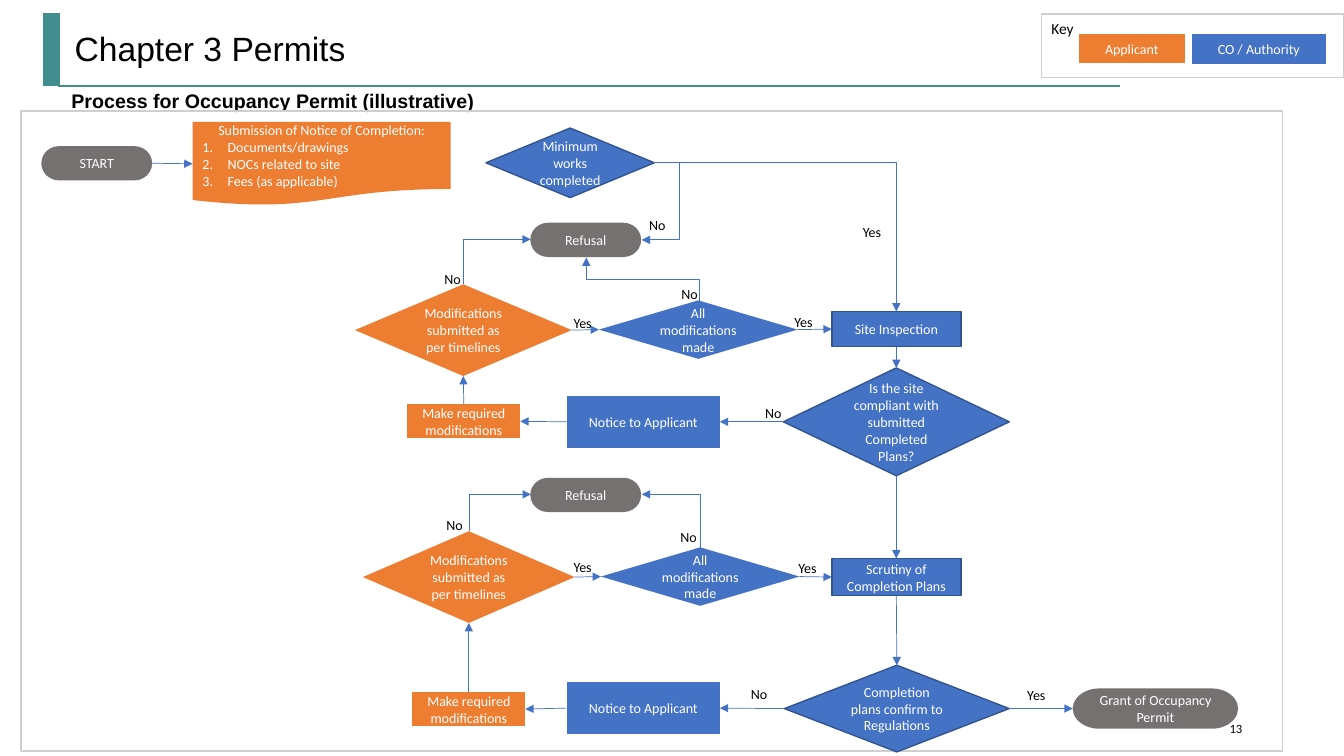
from dataclasses import dataclass
from typing import NamedTuple, Optional

from lxml.etree import SubElement
from pptx import Presentation
from pptx.dml.color import RGBColor
from pptx.enum.shapes import MSO_CONNECTOR, MSO_SHAPE
from pptx.enum.text import MSO_ANCHOR, PP_ALIGN
from pptx.oxml.ns import qn
from pptx.shapes.autoshape import Shape
from pptx.shapes.connector import Connector
from pptx.slide import Slide
from pptx.text.text import TextFrame
from pptx.util import Inches, Pt

TEAL = RGBColor(0x42, 0x8D, 0x8E)
BLUE = RGBColor(0x44, 0x72, 0xC4)
NAVY = RGBColor(0x32, 0x54, 0x91)
ORANGE = RGBColor(0xED, 0x7D, 0x31)
GREY = RGBColor(0x76, 0x71, 0x71)
SILVER = RGBColor(0xD0, 0xCE, 0xCE)
WHITE = RGBColor(0xFF, 0xFF, 0xFF)
BLACK = RGBColor(0, 0, 0)

COLS, ROWS = 133.3, 75
CELL = Inches(0.1)
TOP, LEFT, BOTTOM, RIGHT = range(4)


class Box(NamedTuple):
    x: float
    y: float
    w: float
    h: float


class Style(NamedTuple):
    geometry: MSO_SHAPE
    fill: Optional[RGBColor] = None
    line: Optional[RGBColor] = None


@dataclass
class Node:
    name: str
    text: str
    style: Style
    box: Box


@dataclass
class Arrow:
    start: str
    start_side: int
    end: str
    end_side: int


@dataclass
class Elbow:
    preset: str
    box: Box
    turn: int = 0
    flips: str = ""
    adjust: Optional[int] = None


END = Style(MSO_SHAPE.FLOWCHART_TERMINATOR, GREY)
FORM = Style(MSO_SHAPE.FLOWCHART_DOCUMENT, ORANGE)
CHECK = Style(MSO_SHAPE.FLOWCHART_DECISION, BLUE, NAVY)
REVIEW = Style(MSO_SHAPE.FLOWCHART_DECISION, BLUE)
REPLY = Style(MSO_SHAPE.FLOWCHART_DECISION, ORANGE)
STEP = Style(MSO_SHAPE.FLOWCHART_PROCESS, BLUE, NAVY)
NOTICE = Style(MSO_SHAPE.FLOWCHART_PROCESS, BLUE)
TASK = Style(MSO_SHAPE.FLOWCHART_PROCESS, ORANGE)
FRAME = Style(MSO_SHAPE.RECTANGLE, None, SILVER)

NODES = [
    Node("frame", "", FRAME, Box(2.1, 11, 125.1, 63.5)),
    Node("start", "START", END, Box(4.1, 14.5, 11, 3.4)),
    Node("form", "Submission of Notice of Completion:\nDocuments/drawings\n"
         "NOCs related to site\nFees (as applicable)", FORM, Box(19.1, 12.1, 25.6, 8.3)),
    Node("minimum", "Minimum works completed", CHECK, Box(48.2, 12.7, 16.7, 6.9)),
    Node("inspection", "Site Inspection", STEP, Box(82.5, 30.9, 12.8, 3.5)),
    Node("site", "Is the site compliant with submitted Completed Plans?", CHECK,
         Box(77.7, 36.5, 22.4, 10.7)),
    Node("scrutiny", "Scrutiny of Completion Plans", STEP, Box(82.5, 55.4, 12.8, 3.7)),
    Node("plans", "Completion plans confirm to Regulations", CHECK, Box(77.8, 66, 22.3, 8.6)),
    Node("grant", "Grant of Occupancy Permit", END, Box(106.4, 68.3, 16.4, 4)),
    Node("refusal 1", "Refusal", END, Box(52.6, 22.1, 11, 3.4)),
    Node("notice 1", "Notice to Applicant", NOTICE, Box(56.2, 39.3, 15.2, 5.1)),
    Node("task 1", "Make required modifications", TASK, Box(40.4, 40.1, 11.2, 3.4)),
    Node("reply 1", "Modifications submitted as per timelines", REPLY, Box(35.2, 28.2, 21.5, 9.1)),
    Node("review 1", "All modifications made", REVIEW, Box(59.4, 29.8, 19.7, 5.8)),
    Node("refusal 2", "Refusal", END, Box(52.6, 47.4, 11, 3.4)),
    Node("notice 2", "Notice to Applicant", NOTICE, Box(56.2, 67.7, 15.2, 5.1)),
    Node("task 2", "Make required modifications", TASK, Box(40.9, 68.7, 11.2, 3.3)),
    Node("reply 2", "Modifications submitted as per timelines", REPLY, Box(36, 52.7, 21, 9.1)),
    Node("review 2", "All modifications made", REVIEW, Box(59.6, 54.3, 19.7, 5.8)),
    Node("key", "Key", FRAME, Box(103.3, 1.4, 30, 6.3)),
    Node("key applicant", "Applicant", TASK, Box(107, 3.4, 10.5, 2.8)),
    Node("key authority", "CO / Authority", NOTICE, Box(118.2, 3.4, 13.3, 2.9)),
]

ROUNDS = [("1", "site", "inspection"), ("2", "plans", "scrutiny")]
ARROWS = [
    Arrow("start", RIGHT, "form", LEFT),
    Arrow("inspection", BOTTOM, "site", TOP),
    Arrow("site", BOTTOM, "scrutiny", TOP),
    Arrow("scrutiny", BOTTOM, "plans", TOP),
    Arrow("plans", RIGHT, "grant", LEFT),
]
for number, check, step in ROUNDS:
    ARROWS += [
        Arrow(check, LEFT, f"notice {number}", RIGHT),
        Arrow(f"notice {number}", LEFT, f"task {number}", RIGHT),
        Arrow(f"task {number}", TOP, f"reply {number}", BOTTOM),
        Arrow(f"reply {number}", RIGHT, f"review {number}", LEFT),
        Arrow(f"review {number}", RIGHT, step, LEFT),
    ]

ELBOWS = [
    Elbow("bentConnector2", Box(64.9, 16.1, 24, 14.8)),
    Elbow("bentConnector3", Box(63.65, 16.1, 1.25, 7.7), 0, "H", -197900),
    Elbow("bentConnector2", Box(47.1, 22.6, 4.4, 6.7), 90, "HV"),
    Elbow("bentConnector3", Box(61.6, 22.1, 4.3, 11.2), 270, "V"),
    Elbow("bentConnector2", Box(47.8, 47.8, 3.6, 6.1), 90, "HV"),
    Elbow("bentConnector2", Box(63.9, 48.8, 5.3, 5.8), 270, "V"),
]

ANSWERS = {
    "Yes": [(84.6, 21.7), (55.9, 30.7), (77.8, 30.6), (78.2, 55), (100.9, 67.6), (55.9, 54.9)],
    "No": [(63.4, 21), (66.6, 27.8), (43.1, 26.3), (74.9, 39.6), (43.3, 50.8), (66.5, 51.9),
           (73.5, 67.5)],
}


def grid(*cells: float) -> list[int]:
    """Turn grid columns and rows into slide lengths."""
    return [round(n * CELL) for n in cells]


def write(tf: TextFrame, text: str, size: float, color: RGBColor = BLACK, font: str = "Calibri",
          align: PP_ALIGN = PP_ALIGN.LEFT, anchor: MSO_ANCHOR = MSO_ANCHOR.TOP,
          bold: bool = False) -> None:
    """Fill a text frame and format every run."""
    tf.text = text
    tf.word_wrap = True
    tf.vertical_anchor = anchor
    for p in tf.paragraphs:
        p.alignment = align
        for r in p.runs:
            r.font.name, r.font.size, r.font.bold = font, Pt(size), bold
            r.font.color.rgb = color


def add_text(s: Slide, box: Box) -> TextFrame:
    """Add a text box and return its frame."""
    return s.shapes.add_textbox(*grid(*box)).text_frame


def add_node(s: Slide, node: Node) -> Shape:
    """Draw one flowchart shape with its wording."""
    sp = s.shapes.add_shape(node.style.geometry, *grid(*node.box))
    sp.shadow.inherit = False
    if node.style.fill is None:
        sp.fill.background()
    else:
        sp.fill.solid()
        sp.fill.fore_color.rgb = node.style.fill
    if node.style.line is None:
        sp.line.fill.background()
    else:
        sp.line.color.rgb = node.style.line
        sp.line.width = Pt(1)
    if node.style is FRAME:
        write(sp.text_frame, node.text, 11)
    else:
        write(sp.text_frame, node.text, 10, WHITE, align=PP_ALIGN.CENTER, anchor=MSO_ANCHOR.MIDDLE)
    return sp


def number_items(tf: TextFrame) -> None:
    """Number every paragraph after the heading."""
    for p in tf.paragraphs[1:]:
        p.alignment = PP_ALIGN.LEFT
        pPr = p._p.get_or_add_pPr()
        pPr.set("marL", str(Inches(0.25)))
        pPr.set("indent", str(-Inches(0.25)))
        SubElement(pPr, qn("a:buAutoNum"), type="arabicPeriod")


def add_line(s: Slide, ends: tuple, color: RGBColor, width: float, kind: MSO_CONNECTOR,
             arrow: bool = True) -> Connector:
    """Draw a flat connector, with an arrowhead if asked."""
    cn = s.shapes.add_connector(kind, *grid(*ends))
    cn.line.color.rgb = color
    cn.line.width = Pt(width)
    if arrow:
        SubElement(cn.line._get_or_add_ln(), qn("a:tailEnd"), type="triangle")
    SubElement(cn.element.spPr, qn("a:effectLst"))
    return cn


def add_elbow(s: Slide, elbow: Elbow) -> None:
    """Draw a bent arrow with its turn and flips."""
    x, y, w, h = elbow.box
    cn = add_line(s, (x, y, x + w, y + h), BLUE, 0.5, MSO_CONNECTOR.ELBOW)
    xfrm = cn.element.spPr.find(qn("a:xfrm"))
    xfrm.set("rot", str(elbow.turn * 60000))
    for flip in elbow.flips:
        xfrm.set(f"flip{flip}", "1")
    geometry = cn.element.spPr.find(qn("a:prstGeom"))
    geometry.set("prst", elbow.preset)
    if elbow.adjust is not None:
        SubElement(geometry.find(qn("a:avLst")), qn("a:gd"), name="adj1", fmla=f"val {elbow.adjust}")


def main() -> None:
    """Build the permit flowchart slide."""
    prs = Presentation()
    prs.slide_width, prs.slide_height = grid(COLS, ROWS)
    s = prs.slides.add_slide(prs.slide_layouts[5])
    add_line(s, (5.8, 8.5, 111.1, 8.5), TEAL, 1.5, MSO_CONNECTOR.STRAIGHT, False)
    add_line(s, (5.1, 8.5, 5.1, 1.3), TEAL, 12, MSO_CONNECTOR.STRAIGHT, False)
    title = s.shapes.title
    title.left, title.top, title.width, title.height = grid(6.4, 2.1, 111.4, 5.9)
    write(title.text_frame, "Chapter 3 Permits", 24, font="Arial", anchor=MSO_ANCHOR.MIDDLE)
    title.text_frame.paragraphs[0].line_spacing = 0.9
    tf = add_text(s, Box(6.1, 7.9, 67, 3.6))
    write(tf, "Process for Occupancy Permit (illustrative)", 14, font="Arial", bold=True)
    p = tf.paragraphs[0]
    p.line_spacing, p.space_before, p.space_after = 1.2, Pt(6), Pt(6)

    shapes = {node.name: add_node(s, node) for node in NODES}
    number_items(shapes["form"].text_frame)
    for arrow in ARROWS:
        cn = add_line(s, (0, 0, 1, 1), BLUE, 0.5, MSO_CONNECTOR.STRAIGHT)
        cn.begin_connect(shapes[arrow.start], arrow.start_side)
        cn.end_connect(shapes[arrow.end], arrow.end_side)
    for elbow in ELBOWS:
        add_elbow(s, elbow)
    for answer, places in ANSWERS.items():
        for x, y in places:
            write(add_text(s, Box(x, y, 4.6, 2.7)), answer, 10)
    write(add_text(s, Box(94.2, 69.5, 30, 4)), "13", 9, align=PP_ALIGN.RIGHT,
          anchor=MSO_ANCHOR.BOTTOM)
    prs.save("out.pptx")


if __name__ == "__main__":
    main()
